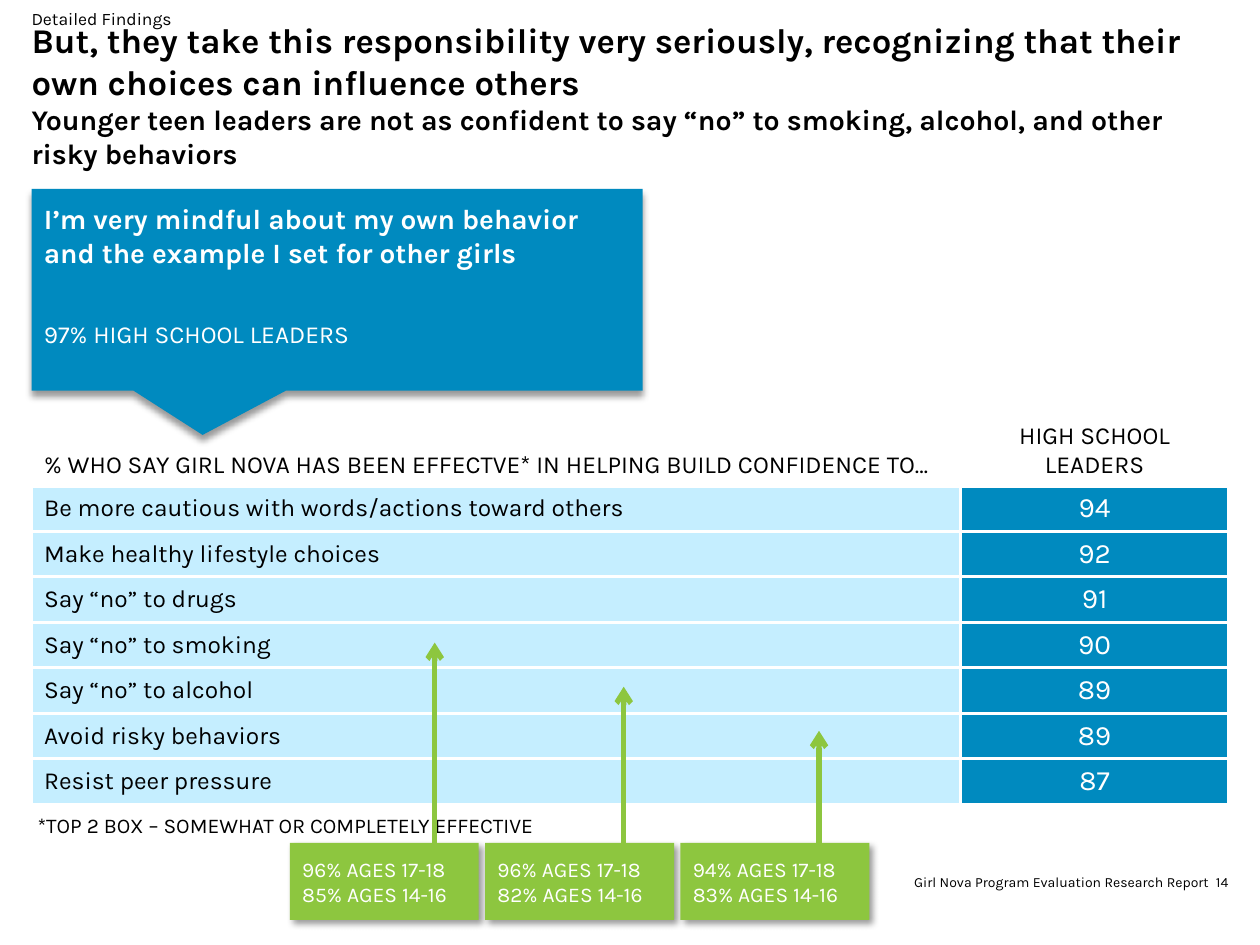
from lxml.etree import SubElement as Sub
from pptx import Presentation as Deck
from pptx.dml.color import RGBColor
from pptx.enum.shapes import MSO_CONNECTOR as Link, MSO_SHAPE as Form
from pptx.enum.text import MSO_ANCHOR as Anchor, MSO_AUTO_SIZE as Fit, PP_ALIGN as Align
from pptx.oxml.ns import qn
from pptx.util import Pt

hue = RGBColor.from_string
BLUE, PALE, GREEN = "008ABF", "C5EEFF", "8DC63F"
WHITE, BLACK = "FFFFFF", "000000"


def write(para, text, size=14, color=BLACK, bold=False, align=Align.LEFT, gap=0):
    para.alignment = align
    para.space_before = Pt(gap)
    run = para.add_run()
    run.text = text
    font = run.font
    font.name, font.size, font.bold = "Karla", Pt(size), bold
    font.color.rgb = hue(color)


def block(form, box, color, angle):
    shape = slide.shapes.add_shape(form, *map(Pt, box))
    shape.fill.solid()
    shape.fill.fore_color.rgb = hue(color)
    shape.line.fill.background()
    shape.shadow.inherit = False
    glow = Sub(shape._element.spPr.find(qn("a:effectLst")), qn("a:outerShdw"),
               blurRad=str(Pt(4)), dist=str(Pt(3)), dir=str(angle * 60000),
               algn="tl", rotWithShape="0")
    tint = Sub(glow, qn("a:srgbClr"), val=BLACK)
    Sub(tint, qn("a:alpha"), val="40000")
    frame = shape.text_frame
    frame.word_wrap = True
    frame.margin_left = frame.margin_right = Pt(7.2)
    frame.margin_top = frame.margin_bottom = Pt(7.2)
    return shape


deck = Deck()
deck.slide_width, deck.slide_height = Pt(720), Pt(540)
slide = deck.slides.add_slide(deck.slide_layouts[5])

title = slide.shapes.title
title.left, title.top, title.width, title.height = map(Pt, (18, 18, 687.6, 72))
frame = title.text_frame
frame.auto_size = Fit.NONE
frame.word_wrap = True
frame.vertical_anchor = Anchor.MIDDLE
frame.margin_left = frame.margin_right = frame.margin_top = frame.margin_bottom = 0
head = frame.paragraphs[0]
write(head, "But, they take this responsibility very seriously, recognizing that "
      "their own choices can influence others", 19.8, bold=True)
head.add_line_break()
Sub(head._p.find(qn("a:br")), qn("a:rPr"), sz="1980")
write(head, "Younger teen leaders are not as confident to say “no” to smoking, "
      "alcohol, and other risky behaviors", 16.2, bold=True)

rows = [
    ("% WHO SAY GIRL NOVA HAS BEEN EFFECTVE* IN HELPING BUILD CONFIDENCE TO…",
     "HIGH SCHOOL LEADERS"),
    ("Be more cautious with words/actions toward others", "94"),
    ("Make healthy lifestyle choices", "92"),
    ("Say “no” to drugs", "91"),
    ("Say “no” to smoking", "90"),
    ("Say “no” to alcohol", "89"),
    ("Avoid risky behaviors", "89"),
    ("Resist peer pressure", "87"),
]
table = slide.shapes.add_table(len(rows), 2, Pt(18), Pt(237.6), Pt(684), Pt(222)).table
table.columns[0].width, table.columns[1].width = Pt(531), Pt(153)
for r, row in enumerate(rows):
    table.rows[r].height = Pt(26 if r else 40)
    for c, text in enumerate(row):
        cell = table.cell(r, c)
        cell.vertical_anchor = Anchor.MIDDLE if r else Anchor.BOTTOM
        for side in ("a:lnL", "a:lnR", "a:lnT", "a:lnB"):
            edge = Sub(cell._tc.get_or_add_tcPr(), qn(side), w=str(Pt(2.25)))
            Sub(Sub(edge, qn("a:solidFill")), qn("a:srgbClr"), val=WHITE)
        cell.fill.solid()
        cell.fill.fore_color.rgb = hue((PALE, BLUE)[c] if r else WHITE)
        score = r and c
        write(cell.text_frame.paragraphs[0], text, 16 if score else 14,
              WHITE if score else BLACK, align=Align.CENTER if c else Align.LEFT)

notes = [
    ("Detailed Findings", (18, 4.3, 241.2, 12.2), 10, Align.LEFT, Anchor.TOP, 0),
    ("*TOP 2 BOX – SOMEWHAT OR COMPLETELY EFFECTIVE", (14.4, 460.8, 396, 21.6),
     12, Align.LEFT, Anchor.TOP, 1),
    ("14", (683.3, 486, 18.7, 36), 8, Align.RIGHT, Anchor.MIDDLE, 0),
    ("Girl Nova Program Evaluation Research Report", (463, 486, 228.2, 36),
     8, Align.RIGHT, Anchor.MIDDLE, 0),
]
for text, box, size, align, anchor, pad in notes:
    frame = slide.shapes.add_textbox(*map(Pt, box)).text_frame
    frame.word_wrap = True
    frame.vertical_anchor = anchor
    frame.margin_left = frame.margin_right = Pt(7.2 * pad)
    frame.margin_top = frame.margin_bottom = Pt(3.6 * pad)
    write(frame.paragraphs[0], text, size, align=align)

quote = block(Form.RECTANGULAR_CALLOUT, (18, 108, 349.2, 115.2), BLUE, 90)
quote.adjustments[0], quote.adjustments[1] = -0.22, 0.72
frame = quote.text_frame
frame.vertical_anchor = Anchor.TOP
write(frame.paragraphs[0], "I’m very mindful about my own behavior and the example "
      "I set for other girls", 16, WHITE, True)
write(frame.add_paragraph(), "97% HIGH SCHOOL LEADERS", 14, WHITE, gap=28.5)

ages = [(96, 85, 248.4, 367.2), (96, 82, 356.4, 392.4), (94, 83, 468, 417.6)]
for i, (old, young, x, tip) in enumerate(ages):
    tag = block(Form.RECTANGLE, (165.6 + 111.6 * i, 481.7, 108, 43.9), GREEN, 45)
    frame = tag.text_frame
    frame.vertical_anchor = Anchor.MIDDLE
    write(frame.paragraphs[0], f"{old}% AGES 17-18", 12, WHITE)
    write(frame.add_paragraph(), f"{young}% AGES 14-16", 12, WHITE)
    arrow = slide.shapes.add_connector(Link.STRAIGHT, Pt(x), Pt(485.3), Pt(x), Pt(tip))
    arrow.line.width = Pt(3)
    arrow.line.color.rgb = hue(GREEN)
    Sub(arrow.line._get_or_add_ln(), qn("a:tailEnd"), type="arrow")
    Sub(arrow._element.spPr, qn("a:effectLst"))

deck.save("out.pptx")
